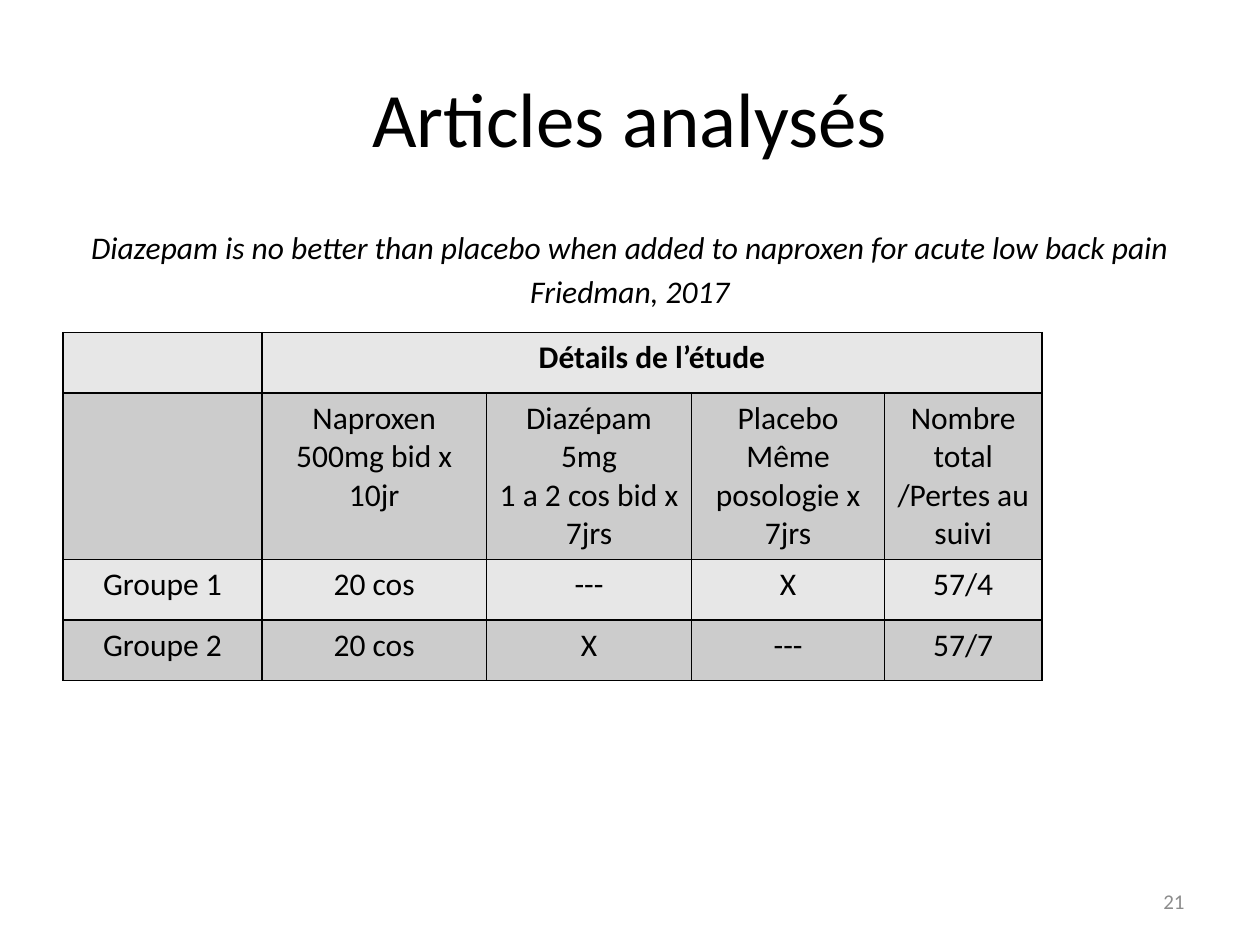
import pptx
import pptx.util
import pptx.dml.color
import pptx.enum.text
import pptx.oxml
import pptx.oxml.ns

COLORS = {"ink": "000000", "number": "8C8C8C", "light": "E7E7E7", "dark": "CCCCCC"}
ALIGN = pptx.enum.text.PP_ALIGN
ANCHOR = pptx.enum.text.MSO_ANCHOR

prs = pptx.Presentation()
prs.slide_width = pptx.util.Inches(10)
prs.slide_height = pptx.util.Inches(7.5)
W, H = prs.slide_width, prs.slide_height
s = prs.slides.add_slide(prs.slide_layouts[5])


def write(tf, text, size=18, color="ink", align=ALIGN.CENTER, bold=False, italic=False, gap=0):
    tf.word_wrap = True
    for i, line in enumerate(text.split("\n")):
        p = tf.paragraphs[0] if i == 0 else tf.add_paragraph()
        p.alignment = align
        p.space_before = pptx.util.Pt(gap if i else 0)
        r = p.add_run()
        r.text = line
        r.font.name = "Calibri"
        r.font.size = pptx.util.Pt(size)
        r.font.bold = bold
        r.font.italic = italic
        r.font.color.rgb = pptx.dml.color.RGBColor.from_string(COLORS[color])


def border(cell):
    tcPr = cell._tc.get_or_add_tcPr()
    for i, side in enumerate(("lnL", "lnR", "lnT", "lnB")):
        tcPr.insert(i, pptx.oxml.parse_xml(
            f'<a:{side} {pptx.oxml.ns.nsdecls("a")} w="12700"><a:solidFill>'
            f'<a:srgbClr val="{COLORS["ink"]}"/></a:solidFill></a:{side}>'))


title = s.shapes.title
title.left, title.top = int(W * 0.05), int(H * 0.04)
title.width, title.height = int(W * 0.9), int(H / 6)
title.text_frame.vertical_anchor = ANCHOR.MIDDLE
write(title.text_frame, "Articles analysés", size=44)

citation = s.shapes.add_textbox(int(W * 0.05), int(H * 0.235), int(W * 0.9), int(H * 0.66))
write(citation.text_frame,
      "Diazepam is no better than placebo when added to naproxen for acute low back pain\nFriedman, 2017",
      italic=True, gap=3.6)

number = s.shapes.add_textbox(int(W * 0.717), int(H * 0.927), int(W * 0.233), int(H * 0.053))
number.text_frame.vertical_anchor = ANCHOR.MIDDLE
write(number.text_frame, "21", size=12, color="number", align=ALIGN.RIGHT)

rows = [
    ["", "Détails de l’étude", "", "", ""],
    ["", "Naproxen 500mg bid x 10jr", "Diazépam\n5mg\n1 a 2 cos bid x 7jrs",
     "Placebo\nMême posologie x 7jrs", "Nombre total /Pertes au suivi"],
    ["Groupe 1", "20 cos", "---", "X", "57/4"],
    ["Groupe 2", "20 cos", "X", "---", "57/7"],
]
col_widths = [1.58, 1.78, 1.63, 1.53, 1.25]
row_heights = [0.48, 1.32, 0.48, 0.48]
table = s.shapes.add_table(
    len(rows), len(col_widths), int(W * 0.05), int(H * 0.352),
    pptx.util.Inches(sum(col_widths)), pptx.util.Inches(sum(row_heights))).table
for col, width in zip(table.columns, col_widths):
    col.width = pptx.util.Inches(width)
for row, height in zip(table.rows, row_heights):
    row.height = pptx.util.Inches(height)
table.cell(0, 1).merge(table.cell(0, 4))

for i, texts in enumerate(rows):
    for j, text in enumerate(texts):
        cell = table.cell(i, j)
        cell.fill.solid()
        cell.fill.fore_color.rgb = pptx.dml.color.RGBColor.from_string(COLORS["dark" if i % 2 else "light"])
        border(cell)
        if text:
            write(cell.text_frame, text, bold=i == 0)

prs.save("out.pptx")
